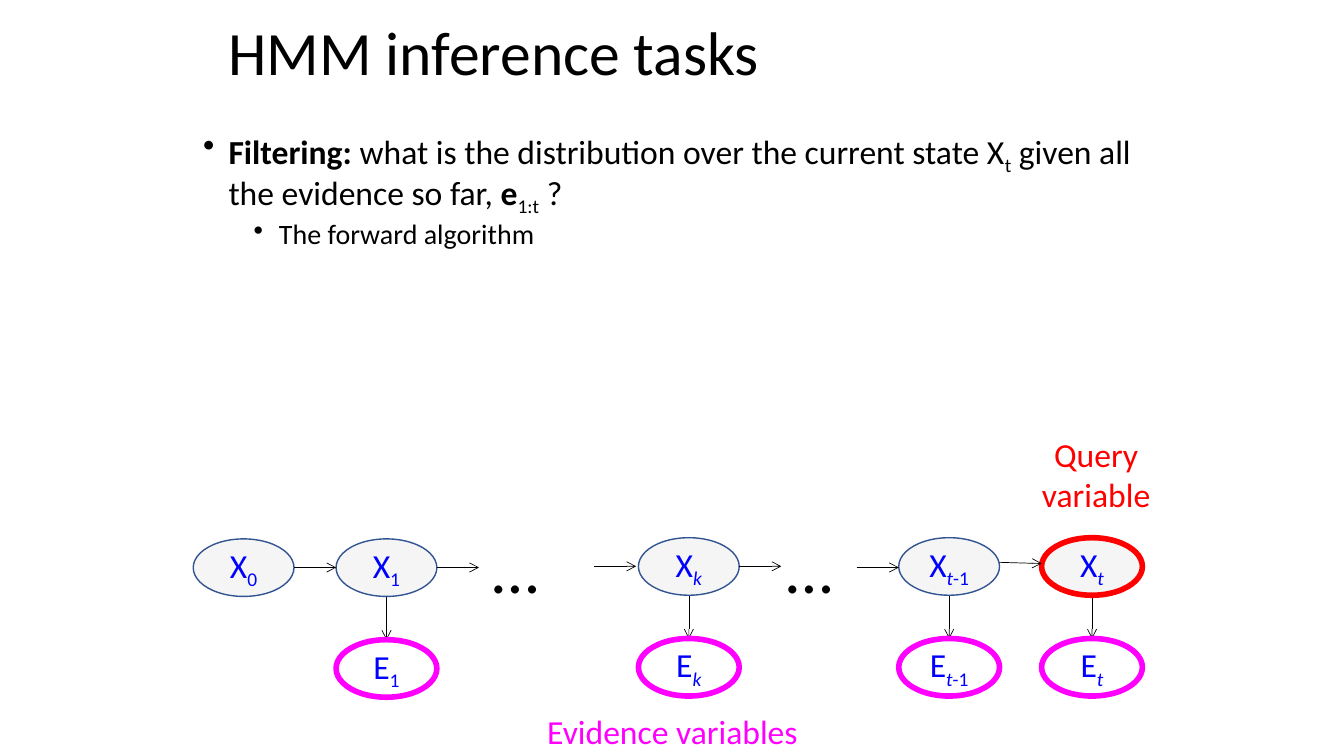
from dataclasses import dataclass

from lxml.etree import SubElement
from pptx import Presentation
from pptx.dml.color import RGBColor as RGB
from pptx.enum.shapes import MSO_CONNECTOR as LINK, MSO_SHAPE as SHAPE
from pptx.enum.text import MSO_ANCHOR as ANCHOR, PP_ALIGN as ALIGN
from pptx.oxml.ns import qn
from pptx.util import Cm, Pt


@dataclass(frozen=True)
class Theme:
    face: str = "Calibri"
    black: RGB = RGB(0, 0, 0)
    blue: RGB = RGB(0, 0, 255)
    red: RGB = RGB(255, 0, 0)
    pink: RGB = RGB(255, 0, 255)
    edge: RGB = RGB(0x32, 0x54, 0x91)
    pale: RGB = RGB(0xF5, 0xF5, 0xF5)
    title: Pt = Pt(44)
    dots: Pt = Pt(48)
    text: Pt = Pt(24)
    small: Pt = Pt(20)


theme = Theme()
deck = Presentation()
deck.slide_width, deck.slide_height = Cm(33.87), Cm(19.05)
slide = deck.slides.add_slide(deck.slide_layouts[6])
shapes = slide.shapes


def write(para, parts, size, color):
    """Add (text, style) runs; style letters: b bold, i italic, s subscript."""
    font = para.font
    font.name, font.size, font.color.rgb = theme.face, size, color
    for text, style in parts:
        run = para.add_run()
        run.text = text
        if "b" in style:
            run.font.bold = True
        if "i" in style:
            run.font.italic = True
        if "s" in style:
            run.font._element.set("baseline", "-25000")


def arrow(x1, y1, x2, y2):
    link = shapes.add_connector(LINK.STRAIGHT, Cm(x1), Cm(y1), Cm(x2), Cm(y2))
    link.line.width = Pt(0.5)
    link.line.color.rgb = theme.black
    SubElement(link.line._ln, qn("a:tailEnd"), type="arrow")
    SubElement(link._element.spPr, qn("a:effectLst"))


# Title
title = shapes.add_textbox(Cm(5.5), Cm(0.2), Cm(22.86), Cm(2.41)).text_frame
title.word_wrap = True
title.vertical_anchor = ANCHOR.MIDDLE
title.paragraphs[0].line_spacing = 0.9
write(title.paragraphs[0], [("HMM inference tasks", "")], theme.title, theme.black)

# Bulleted text
body = shapes.add_textbox(Cm(4.87), Cm(3.18), Cm(24.13), Cm(13.84)).text_frame
body.word_wrap = True
task = [
    ("Filtering: ", "b"),
    ("what is the distribution over the current state X", ""),
    ("t", "s"),
    (" given all the evidence so far, ", ""),
    ("e", "b"),
    ("1:t", "s"),
    (" ?", ""),
]
method = [("The forward algorithm", "")]
points = [
    (body.paragraphs[0], task, theme.text, 0, 0.64, 10),
    (body.add_paragraph(), method, theme.small, 1, 1.91, 5),
]
for para, parts, size, level, left, gap in points:
    para.level = level
    props = para._p.get_or_add_pPr()
    props.set("marL", str(Cm(left)))
    props.set("indent", str(Cm(-0.64)))
    SubElement(props, qn("a:buChar"), char="•")
    para.line_spacing = 0.9
    para.space_before = Pt(gap)
    write(para, parts, size, theme.black)

# States X above their evidence E
wide, high, drop = 2.54, 1.45, 2.54
nodes = [
    (4.87, 13.58, [("0", "s")]),
    (8.47, 13.58, [("1", "s")]),
    (16.09, 13.55, [("k", "is")]),
    (22.65, 13.55, [("t", "is"), ("-1", "s")]),
    (26.25, 13.55, [("t", "is")]),
]
first, last = nodes[0], nodes[-1]
for node in nodes:
    left, top, sub = node
    edge, weight = (theme.red, 4) if node is last else (theme.edge, 1)
    ovals = [("X", top, theme.pale, edge, weight)]
    if node is not first:
        ovals.append(("E", top + drop, None, theme.pink, 4))
        mid = left + wide / 2
        arrow(mid, top + high, mid, top + drop)
    for name, y, fill, edge, weight in ovals:
        oval = shapes.add_shape(SHAPE.OVAL, Cm(left), Cm(y), Cm(wide), Cm(high))
        oval.shadow.inherit = False
        if fill is None:
            oval.fill.background()
        else:
            oval.fill.solid()
            oval.fill.fore_color.rgb = fill
        oval.line.color.rgb = edge
        oval.line.width = Pt(weight)
        frame = oval.text_frame
        frame.word_wrap = False
        frame.vertical_anchor = ANCHOR.MIDDLE
        frame.paragraphs[0].alignment = ALIGN.CENTER
        write(frame.paragraphs[0], [(name, "")] + sub, theme.text, theme.blue)

# Steps along the chain
step = 1.06
for x, y in [(7.41, 14.3), (11.01, 14.3), (14.97, 14.27), (18.63, 14.27), (21.59, 14.3)]:
    arrow(x, y, x + step, y)
arrow(25.19, 14.17, 26.25, 14.2)

# Dots and captions
notes = [
    ("…", 12.17, 13.13, 1.7, 2.31, theme.dots, theme.black, False, ALIGN.LEFT),
    ("…", 19.58, 13.13, 1.7, 2.31, theme.dots, theme.black, False, ALIGN.LEFT),
    ("Query variable", 25.81, 10.8, 3.63, 2.31, theme.text, theme.red, True, ALIGN.CENTER),
    ("Evidence variables", 13.54, 17.78, 6.91, 1.27, theme.text, theme.pink, False, ALIGN.LEFT),
]
for text, x, y, w, h, size, color, wrap, align in notes:
    frame = shapes.add_textbox(Cm(x), Cm(y), Cm(w), Cm(h)).text_frame
    frame.word_wrap = wrap
    frame.paragraphs[0].alignment = align
    write(frame.paragraphs[0], [(text, "")], size, color)

deck.save("out.pptx")
